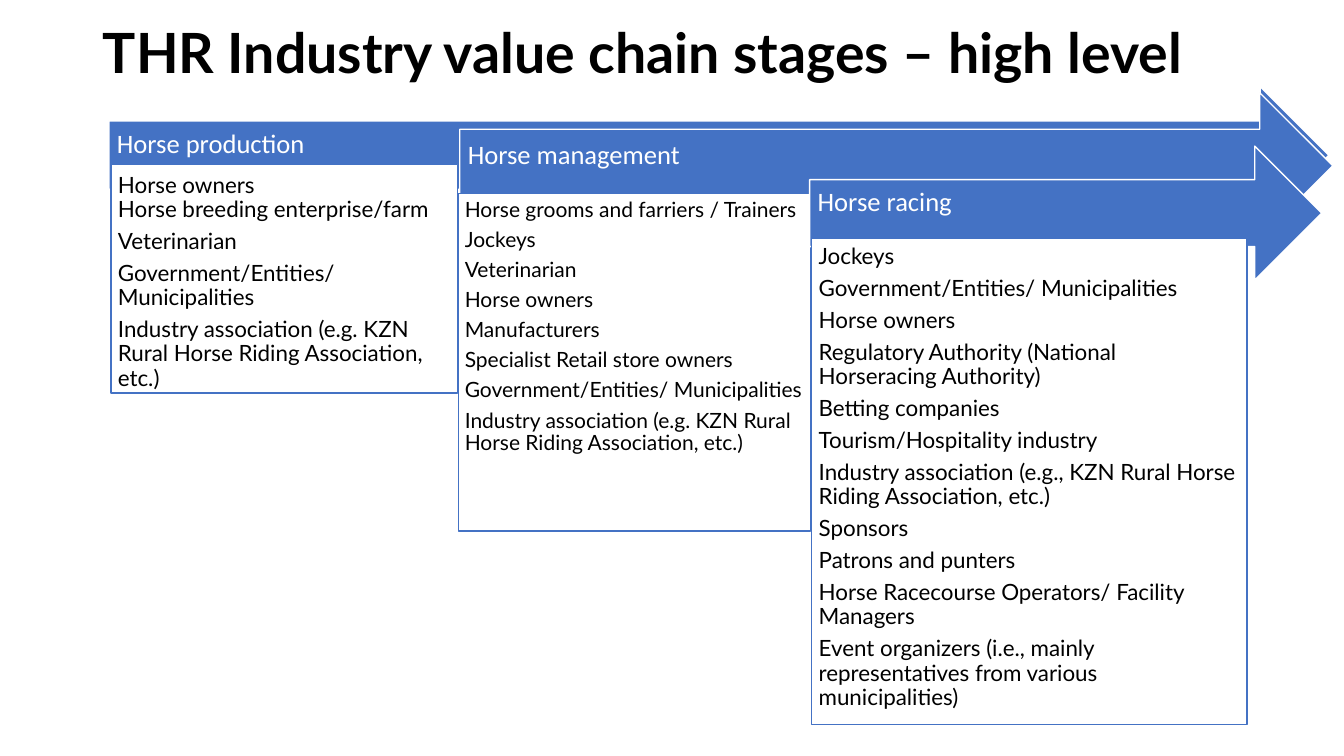
import pptx
import pptx.util
import pptx.dml.color
import pptx.enum.shapes
import pptx.enum.text
from dataclasses import dataclass

Inches = pptx.util.Inches
Pt = pptx.util.Pt
Shape = pptx.enum.shapes.MSO_SHAPE
Anchor = pptx.enum.text.MSO_ANCHOR
Align = pptx.enum.text.PP_ALIGN

TITLE = "THR Industry value chain stages – high level"
TITLE_AREA = (0.92, 0.18, 11.5, 0.75)
ASSOCIATION = "Industry association (e.g. KZN Rural Horse Riding Association, etc.)"
GOVERNMENT = "Government/Entities/ Municipalities"

STAGES = [
    {
        "name": "Horse production",
        "arrow": (1.08, 0.86, 12.1, 1.36),
        "panel": (1.1, 1.63, 3.44, 2.27),
        "size": 16,
        "inset": 0.07,
        "tight_first": True,
        "actors": ["Horse owners", "Horse breeding enterprise/farm", "Veterinarian",
                   GOVERNMENT, ASSOCIATION],
    },
    {
        "name": "Horse management",
        "arrow": (4.56, 0.92, 8.66, 1.45),
        "panel": (4.55, 1.92, 3.49, 3.35),
        "size": 15,
        "inset": 0.06,
        "tight_first": False,
        "actors": ["Horse grooms and farriers / Trainers", "Jockeys", "Veterinarian",
                   "Horse owners", "Manufacturers", "Specialist Retail store owners",
                   GOVERNMENT, ASSOCIATION],
    },
    {
        "name": "Horse racing",
        "arrow": (8.03, 1.45, 5.08, 1.33),
        "panel": (8.05, 2.36, 4.32, 4.83),
        "size": 16,
        "inset": 0.07,
        "tight_first": False,
        "actors": ["Jockeys", GOVERNMENT, "Horse owners",
                   "Regulatory Authority (National Horseracing Authority)",
                   "Betting companies", "Tourism/Hospitality industry",
                   "Industry association (e.g., KZN Rural Horse Riding Association, etc.)",
                   "Sponsors", "Patrons and punters",
                   "Horse Racecourse Operators/ Facility Managers",
                   "Event organizers (i.e., mainly representatives from various municipalities)"],
    },
]


@dataclass(frozen=True)
class Theme:
    blue: str = "4472C4"
    white: str = "FFFFFF"
    black: str = "000000"
    heading_font: str = "Calibri"
    body_font: str = "Lato"
    title_size: float = 39.6
    heading_size: float = 19
    line_width: float = 1
    line_spacing: float = 0.9
    gap_ratio: float = 0.35


THEME = Theme()


def color(code):
    return pptx.dml.color.RGBColor.from_string(code)


def write(frame, lines, insets, anchor, font, size, ink, gap, bold=False):
    frame.word_wrap = True
    frame.auto_size = pptx.enum.text.MSO_AUTO_SIZE.NONE
    frame.vertical_anchor = anchor
    frame.margin_left, frame.margin_top, frame.margin_right, frame.margin_bottom = map(Inches, insets)
    frame.text = "\n".join(lines)
    for para in frame.paragraphs:
        para.alignment = Align.LEFT
        para.line_spacing = THEME.line_spacing
        para.space_before = Pt(0)
        para.space_after = Pt(gap)
        for span in para.runs:
            span.font.name = font
            span.font.size = Pt(size)
            span.font.bold = bold
            span.font.color.rgb = color(ink)


def add_box(page, kind, area, fill, line):
    box = page.shapes.add_shape(kind, *map(Inches, area))
    box.shadow.inherit = False
    box.fill.solid()
    box.fill.fore_color.rgb = color(fill)
    box.line.color.rgb = color(line)
    box.line.width = Pt(THEME.line_width)
    return box


def add_stage(page, stage):
    arrow = add_box(page, Shape.RIGHT_ARROW, stage["arrow"], THEME.blue, THEME.white)
    write(arrow.text_frame, [stage["name"]], (0.08, 0.08, 0.28, 0.28), Anchor.MIDDLE,
          THEME.heading_font, THEME.heading_size, THEME.white,
          THEME.heading_size * THEME.gap_ratio)
    panel = add_box(page, Shape.RECTANGLE, stage["panel"], THEME.white, THEME.blue)
    write(panel.text_frame, stage["actors"], [stage["inset"]] * 4, Anchor.TOP,
          THEME.body_font, stage["size"], THEME.black, stage["size"] * THEME.gap_ratio)
    if stage["tight_first"]:
        first = panel.text_frame.paragraphs[0]
        first.line_spacing = 1.0
        first.space_after = Pt(0)


def main():
    deck = pptx.Presentation()
    deck.slide_width, deck.slide_height = Inches(13.33), Inches(7.5)
    page = deck.slides.add_slide(deck.slide_layouts[5])
    title = page.shapes.title
    title.left, title.top, title.width, title.height = map(Inches, TITLE_AREA)
    write(title.text_frame, [TITLE], (0.1, 0.05, 0.1, 0.05), Anchor.MIDDLE,
          THEME.body_font, THEME.title_size, THEME.black, 0, bold=True)
    for stage in STAGES:
        add_stage(page, stage)
    deck.save("out.pptx")


if __name__ == "__main__":
    main()
